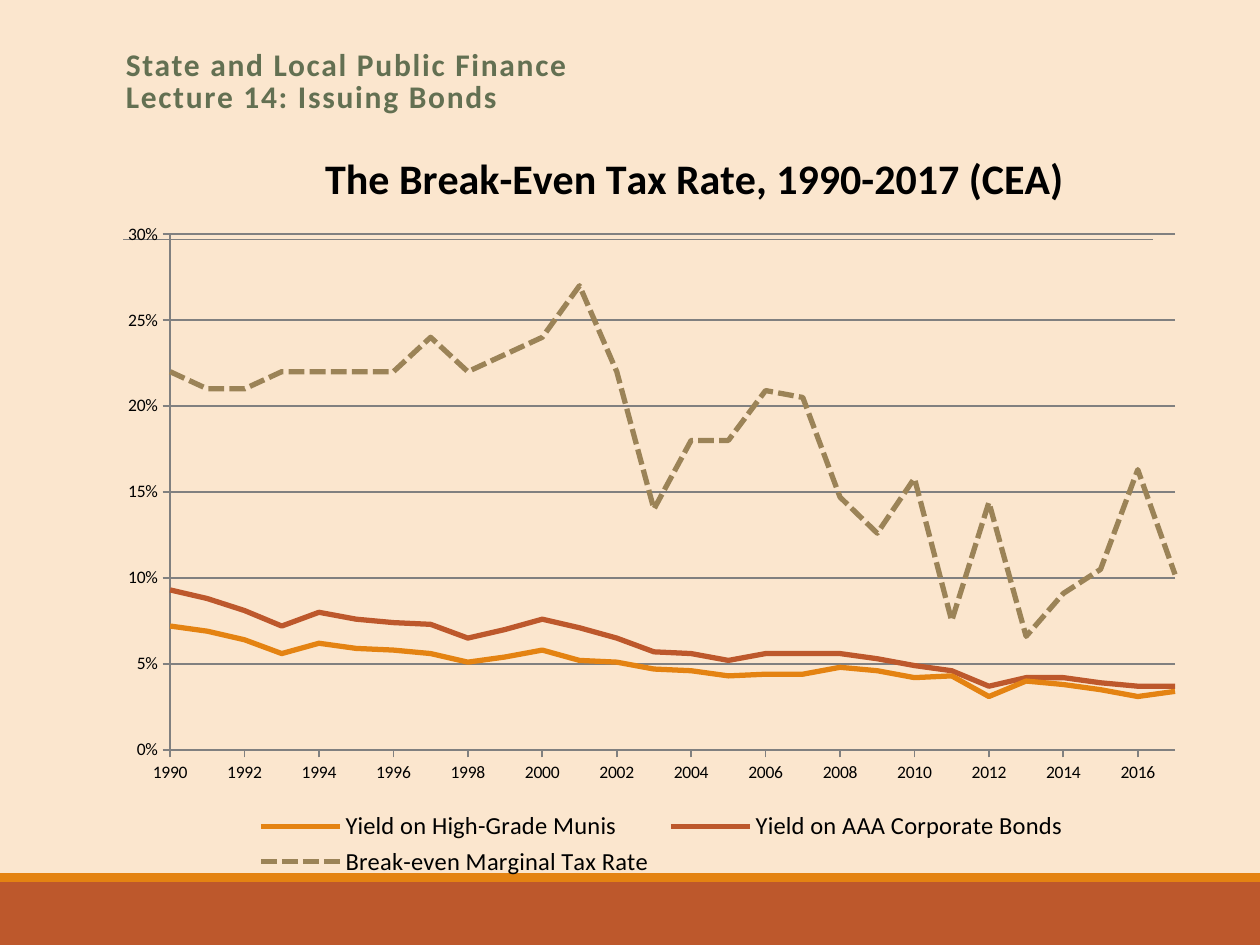
from dataclasses import dataclass

from lxml import etree
from pptx import Presentation
from pptx.chart.data import XyChartData
from pptx.dml.color import RGBColor
from pptx.enum.chart import XL_CHART_TYPE as ChartType
from pptx.enum.chart import XL_LEGEND_POSITION as LegendPosition
from pptx.enum.chart import XL_TICK_MARK as TickMark
from pptx.enum.dml import MSO_LINE_DASH_STYLE as Dash
from pptx.enum.shapes import MSO_CONNECTOR as Connector
from pptx.enum.shapes import MSO_SHAPE as Shape
from pptx.enum.text import MSO_ANCHOR as Anchor
from pptx.oxml.ns import qn
from pptx.util import Inches, Pt


@dataclass(frozen=True)
class Theme:
    font: str = "Calibri"
    background: str = "FBE6CE"
    rust: str = "BD582C"
    orange: str = "E48312"
    tan: str = "9B8357"
    green: str = "637052"
    gray: str = "808080"
    black: str = "000000"
    heading_size: int = 18
    title_size: int = 24
    legend_size: int = 14
    axis_size: int = 10


THEME = Theme()
YEARS = range(1990, 2018)
HEADING = ["State and Local Public Finance", "Lecture 14: Issuing Bonds"]
CHART_TITLE = "The Break-Even Tax Rate, 1990-2017 (CEA)"
# Name, colour, dash, yearly values
SERIES = [
    ("Yield on High-Grade Munis", THEME.orange, Dash.SOLID,
     [0.072, 0.069, 0.064, 0.056, 0.062, 0.059, 0.058, 0.056, 0.051, 0.054,
      0.058, 0.052, 0.051, 0.047, 0.046, 0.043, 0.044, 0.044, 0.048, 0.046,
      0.042, 0.043, 0.031, 0.04, 0.038, 0.035, 0.031, 0.034]),
    ("Yield on AAA Corporate Bonds", THEME.rust, Dash.SOLID,
     [0.093, 0.088, 0.081, 0.072, 0.08, 0.076, 0.074, 0.073, 0.065, 0.07,
      0.076, 0.071, 0.065, 0.057, 0.056, 0.052, 0.056, 0.056, 0.056, 0.053,
      0.049, 0.046, 0.037, 0.042, 0.042, 0.039, 0.037, 0.037]),
    ("Break-even Marginal Tax Rate", THEME.tan, Dash.SQUARE_DOT,
     [0.22, 0.21, 0.21, 0.22, 0.22, 0.22, 0.22, 0.24, 0.22, 0.23,
      0.24, 0.27, 0.22, 0.14, 0.18, 0.18, 0.209, 0.205, 0.147, 0.126,
      0.158, 0.075, 0.144, 0.066, 0.091, 0.105, 0.163, 0.102]),
]


def color(code):
    return RGBColor.from_string(code)


def style_font(font, size, code=THEME.black, bold=False):
    font.name, font.size, font.bold = THEME.font, Pt(size), bold
    font.color.rgb = color(code)


def style_line(line, code, width):
    line.color.rgb = color(code)
    line.width = Pt(width)


def set_layout(element, index, inner=False, **fractions):
    """Place a chart part by fractions of the chart's size."""
    for old in element.findall(qn("c:layout")):
        element.remove(old)
    layout = etree.Element(qn("c:layout"))
    manual = etree.SubElement(layout, qn("c:manualLayout"))
    if inner:
        etree.SubElement(manual, qn("c:layoutTarget")).set("val", "inner")
    for side in ("x", "y"):
        etree.SubElement(manual, qn(f"c:{side}Mode")).set("val", "edge")
    for name, value in fractions.items():
        etree.SubElement(manual, qn(f"c:{name}")).set("val", str(value))
    element.insert(index, layout)


def add_footer(page, left, top, width, height):
    stripe = 0.07
    bands = [(top + stripe, height - stripe, THEME.rust),
             (top, stripe, THEME.orange)]
    for band_top, band_height, code in bands:
        band = page.shapes.add_shape(Shape.RECTANGLE, Inches(left), Inches(band_top),
                                     Inches(width), Inches(band_height))
        band.shadow.inherit = False
        band.fill.solid()
        band.fill.fore_color.rgb = color(code)
        band.line.fill.background()


def add_rule(page, left, top, width):
    rule = page.shapes.add_connector(Connector.STRAIGHT, Inches(left), Inches(top),
                                     Inches(left + width), Inches(top))
    style_line(rule.line, THEME.gray, 0.5)
    etree.SubElement(rule._element.spPr, qn("a:effectLst"))


def add_heading(page, left, top, width, height):
    box = page.shapes.add_textbox(Inches(left), Inches(top), Inches(width), Inches(height))
    frame = box.text_frame
    frame.word_wrap = True
    frame.vertical_anchor = Anchor.MIDDLE
    para = frame.paragraphs[0]
    para.line_spacing = 0.85
    for number, text in enumerate(HEADING):
        if number:
            para.add_line_break()
        span = para.add_run()
        span.text = text
        style_font(span.font, THEME.heading_size, THEME.green, bold=True)
        span.font._element.set("spc", "100")


def style_axes(chart):
    years, rates = chart.category_axis, chart.value_axis
    for axis in (years, rates):
        axis.major_tick_mark = TickMark.OUTSIDE
        axis.minor_tick_mark = TickMark.NONE
        style_font(axis.tick_labels.font, THEME.axis_size)
        style_line(axis.format.line, THEME.gray, 1)
    years.has_major_gridlines = False
    years.minimum_scale, years.maximum_scale = YEARS[0], YEARS[-1]
    years.major_unit = 2
    years.tick_labels.number_format = "General"
    years.tick_labels.number_format_is_linked = False
    rates.has_major_gridlines = True
    style_line(rates.major_gridlines.format.line, THEME.gray, 1)
    rates.minimum_scale, rates.maximum_scale = 0, 0.3
    rates.major_unit = 0.05
    rates.tick_labels.number_format = "0%"
    rates.tick_labels.number_format_is_linked = False


def add_rate_chart(page, left, top, width, height):
    data = XyChartData()
    for name, _, _, values in SERIES:
        series = data.add_series(name)
        for year, value in zip(YEARS, values):
            series.add_data_point(year, value)
    chart = page.shapes.add_chart(ChartType.XY_SCATTER_LINES_NO_MARKERS, Inches(left),
                                  Inches(top), Inches(width), Inches(height), data).chart
    style_font(chart.font, THEME.axis_size)

    # Transparent chart background
    background = etree.Element(qn("c:spPr"))
    etree.SubElement(background, qn("a:noFill"))
    etree.SubElement(etree.SubElement(background, qn("a:ln")), qn("a:noFill"))
    chart._chartSpace.find(qn("c:chart")).addnext(background)

    # Plot
    style_axes(chart)
    for series, (_, code, dash, _) in zip(chart.plots[0].series, SERIES):
        style_line(series.format.line, code, 3)
        series.format.line.dash_style = dash
        series.smooth = False
    plot_area = chart._chartSpace.find(".//" + qn("c:plotArea"))
    set_layout(plot_area, 0, inner=True, x=0.06, y=0.146, w=0.92, h=0.68)

    # Title
    chart.has_title = True
    title = chart.chart_title
    title.include_in_layout = False
    span = title.text_frame.paragraphs[0].add_run()
    span.text = CHART_TITLE
    style_font(span.font, THEME.title_size, bold=True)
    set_layout(title._element, 1, x=0.195, y=0.025)

    # Legend
    chart.has_legend = True
    chart.legend.position = LegendPosition.BOTTOM
    chart.legend.include_in_layout = False
    style_font(chart.legend.font, THEME.legend_size)
    set_layout(chart.legend._element, 1, x=0.13, y=0.9, w=0.76, h=0.1)


def main():
    deck = Presentation()
    deck.slide_width, deck.slide_height = Inches(10), Inches(7.5)
    page = deck.slides.add_slide(deck.slide_layouts[6])
    page.background.fill.solid()
    page.background.fill.fore_color.rgb = color(THEME.background)
    add_footer(page, 0, 6.93, 10, 0.57)
    add_rule(page, 0.98, 1.9, 8.17)
    add_heading(page, 0.9, 0.33, 8.25, 0.65)
    add_rate_chart(page, 0.83, 0.98, 8.67, 6.02)
    deck.save("out.pptx")


if __name__ == "__main__":
    main()
